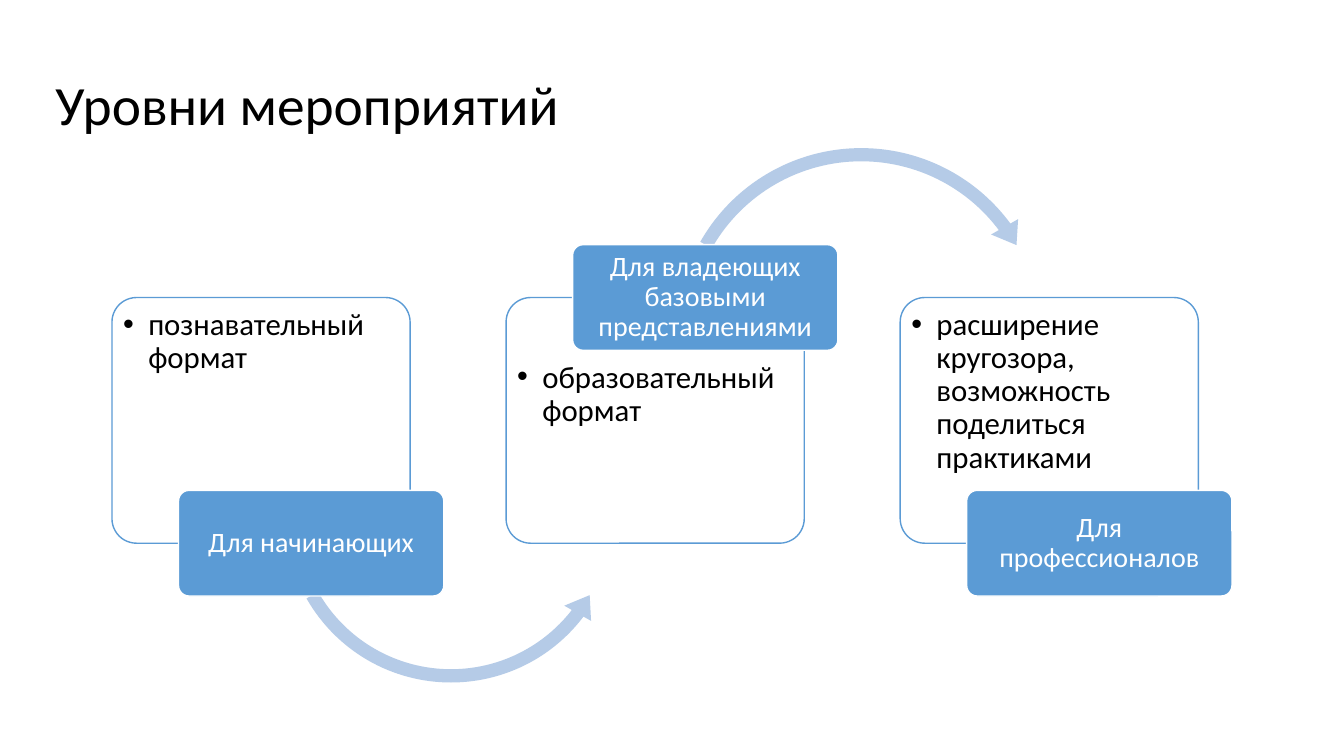
from dataclasses import dataclass

from lxml.etree import SubElement
from pptx import Presentation
from pptx.dml.color import RGBColor
from pptx.enum.shapes import MSO_SHAPE
from pptx.enum.text import MSO_ANCHOR, MSO_AUTO_SIZE, PP_ALIGN
from pptx.oxml.ns import qn
from pptx.util import Pt


@dataclass(frozen=True)
class Theme:
    font: str = "Calibri"
    ink: str = "000000"
    paper: str = "FFFFFF"
    accent: str = "5B9BD5"
    arrow: str = "B5CBE7"
    title_size: float = 39.6
    body_size: float = 22
    label_size: float = 20


THEME = Theme()

CARD_LEFT, CARD_TOP, CARD_STEP = 80, 212.5, 281.5
CARD_WIDTH, CARD_HEIGHT = 213, 175.5
LABEL_OFFSET, LABEL_WIDTH, LABEL_HEIGHT = 47.5, 189.5, 75.5
LABEL_HIGH = CARD_TOP - LABEL_HEIGHT / 2
LABEL_LOW = LABEL_HIGH + CARD_HEIGHT

# Card text, label text, whether the label sits on the top edge
LEVELS = [
    ("познавательный формат", "Для начинающих", False),
    ("образовательный формат", "Для владеющих базовыми представлениями", True),
    ("расширение кругозора, возможность поделиться практиками",
     "Для профессионалов", False),
]

# Preset, left, top, side and adjustments of the arrow leaving each level
ARROWS = [
    (MSO_SHAPE.LEFT_CIRCULAR_ARROW, 197.3, 244, 249.8,
     (0.038, 4.688, 22.443, 90.245, 0.044)),
    (MSO_SHAPE.CIRCULAR_ARROW, 476.6, 99.4, 277.2,
     (0.034, 4.191, 194.054, 125.755, 0.04)),
]


def set_all(target, values):
    for name, value in values.items():
        setattr(target, name, value)


def write_text(holder, text, size, color, align, anchor, margins):
    """Fill a shape with one paragraph; margins are left, top, right, bottom."""
    frame = holder.text_frame
    frame.text = text
    sides = ("margin_left", "margin_top", "margin_right", "margin_bottom")
    set_all(frame, {
        "word_wrap": True,
        "auto_size": MSO_AUTO_SIZE.NONE,
        "vertical_anchor": anchor,
        **{side: Pt(margin) for side, margin in zip(sides, margins)},
    })
    paragraph = frame.paragraphs[0]
    set_all(paragraph, {"alignment": align, "line_spacing": 0.9})
    font = paragraph.runs[0].font
    set_all(font, {"name": THEME.font, "size": Pt(size)})
    font.color.rgb = RGBColor.from_string(color)
    return paragraph


def add_figure(slide, preset, box, fill, line, adjustments):
    figure = slide.shapes.add_shape(preset, *map(Pt, box))
    figure.shadow.inherit = False
    for index, value in enumerate(adjustments):
        figure.adjustments[index] = value
    figure.fill.solid()
    figure.fill.fore_color.rgb = RGBColor.from_string(fill)
    if line:
        figure.line.color.rgb = RGBColor.from_string(line)
        figure.line.width = Pt(1)
    else:
        figure.line.fill.background()
    return figure


def add_bullet(paragraph, indent):
    properties = paragraph._p.get_or_add_pPr()
    properties.set("marL", str(Pt(indent)))
    properties.set("indent", str(-Pt(indent)))
    SubElement(properties, qn("a:buFont"), typeface="Arial")
    SubElement(properties, qn("a:buChar"), char="•")


def add_card(slide, left, text, label_on_top):
    card = add_figure(slide, MSO_SHAPE.ROUNDED_RECTANGLE,
                      (left, CARD_TOP, CARD_WIDTH, CARD_HEIGHT),
                      THEME.paper, THEME.accent, [0.1])
    top_margin = 2.8 + (LABEL_HEIGHT / 2 if label_on_top else 0)
    paragraph = write_text(card, text, THEME.body_size, THEME.ink, PP_ALIGN.LEFT,
                           MSO_ANCHOR.TOP, (2.8, top_margin, 2.2, 2.8))
    add_bullet(paragraph, 18)


def add_label(slide, left, text, on_top):
    label = add_figure(slide, MSO_SHAPE.ROUNDED_RECTANGLE,
                       (left + LABEL_OFFSET, LABEL_HIGH if on_top else LABEL_LOW,
                        LABEL_WIDTH, LABEL_HEIGHT),
                       THEME.accent, THEME.paper, [0.1])
    write_text(label, text, THEME.label_size, THEME.paper, PP_ALIGN.CENTER,
               MSO_ANCHOR.MIDDLE, (3, 2, 3, 2))


def add_title(slide, text):
    title = slide.shapes.title
    set_all(title, {"left": Pt(32.4), "top": Pt(46.8),
                    "width": Pt(894), "height": Pt(60.5)})
    write_text(title, text, THEME.title_size, THEME.ink, PP_ALIGN.LEFT,
               MSO_ANCHOR.MIDDLE, (7.2,) * 4)


def main():
    deck = Presentation()
    set_all(deck, {"slide_width": Pt(960), "slide_height": Pt(540)})
    slide = deck.slides.add_slide(deck.slide_layouts.get_by_name("Title Only"))
    add_title(slide, "Уровни мероприятий")
    for index, (card_text, label_text, on_top) in enumerate(LEVELS):
        left = CARD_LEFT + index * CARD_STEP
        add_card(slide, left, card_text, on_top)
        if index < len(ARROWS):
            preset, arrow_left, arrow_top, side, bends = ARROWS[index]
            add_figure(slide, preset, (arrow_left, arrow_top, side, side),
                       THEME.arrow, None, bends)
        add_label(slide, left, label_text, on_top)
    deck.save("out.pptx")


if __name__ == "__main__":
    main()
